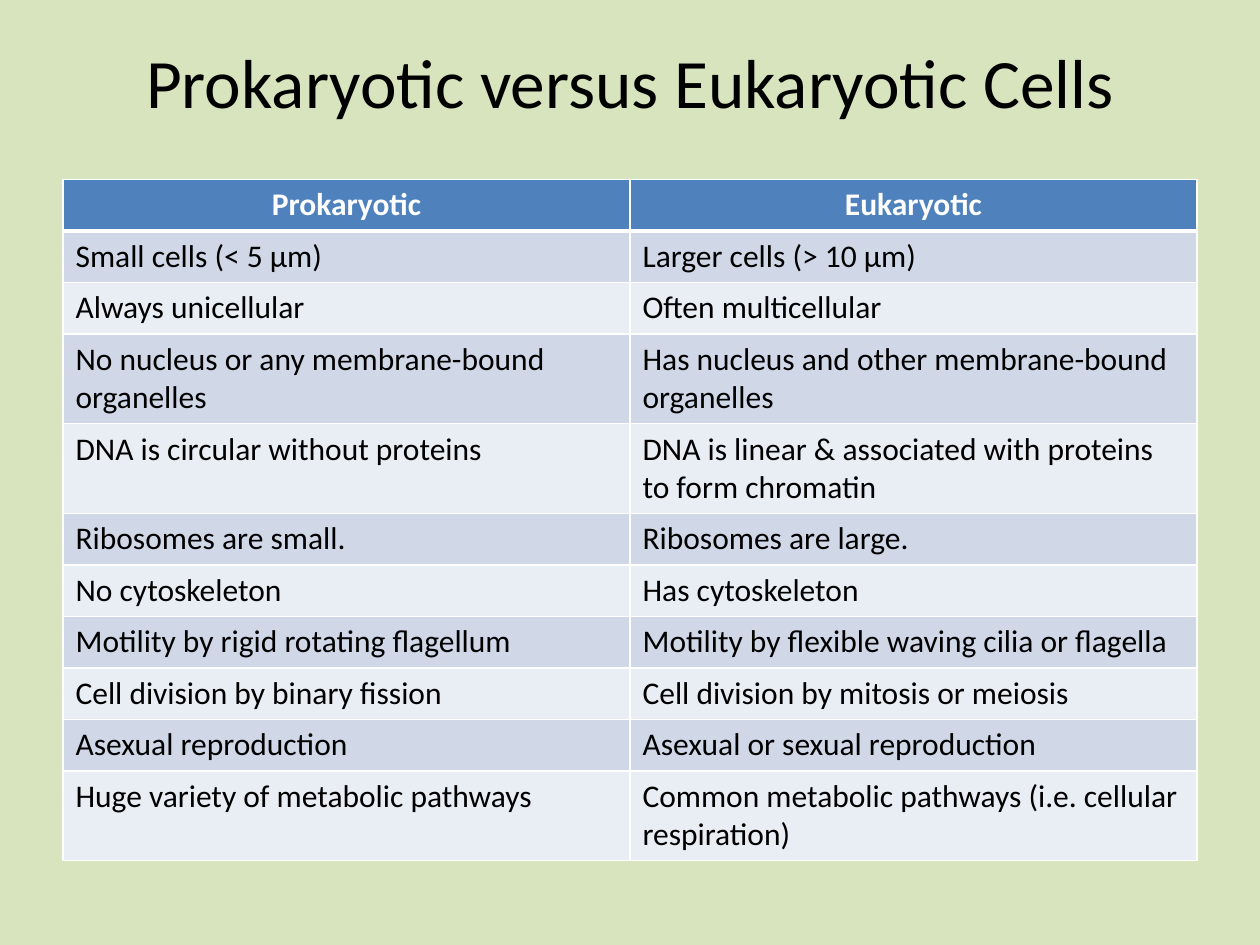
from lxml.etree import SubElement
from pptx import Presentation
from pptx.dml.color import RGBColor
from pptx.enum.text import MSO_ANCHOR as Anchor, PP_ALIGN as Align
from pptx.oxml.ns import qn
from pptx.util import Inches, Pt

TITLE = "Prokaryotic versus Eukaryotic Cells"
HEADINGS = ("Prokaryotic", "Eukaryotic")
COMPARISONS = [
    ("Small cells (< 5 μm)", "Larger cells (> 10 μm)"),
    ("Always unicellular", "Often multicellular"),
    ("No nucleus or any membrane-bound organelles",
     "Has nucleus and other membrane-bound organelles"),
    ("DNA is circular without proteins",
     "DNA is linear & associated with proteins to form chromatin"),
    ("Ribosomes are small.", "Ribosomes are large."),
    ("No cytoskeleton", "Has cytoskeleton"),
    ("Motility by rigid rotating flagellum",
     "Motility by flexible waving cilia or flagella"),
    ("Cell division by binary fission", "Cell division by mitosis or meiosis"),
    ("Asexual reproduction", "Asexual or sexual reproduction"),
    ("Huge variety of metabolic pathways",
     "Common metabolic pathways (i.e. cellular respiration)"),
]


def color(hex_string):
    return RGBColor.from_string(hex_string)


def write(frame, text, size=18, ink="000000", bold=False, align=Align.LEFT):
    paragraph = frame.paragraphs[0]
    paragraph.alignment = align
    run = paragraph.add_run()
    run.text = text
    run.font.name = "Calibri"
    run.font.size = Pt(size)
    run.font.bold = bold
    run.font.color.rgb = color(ink)


def set_borders(cell, ink, **widths):
    """Draw cell borders; widths in points are keyed L, R, T and B."""
    properties = cell._tc.get_or_add_tcPr()
    for position, (side, width) in enumerate(widths.items()):
        line = SubElement(properties, qn(f"a:ln{side}"), w=str(Pt(width)))
        fill = SubElement(line, qn("a:solidFill"))
        SubElement(fill, qn("a:srgbClr"), val=ink)
        properties.insert(position, line)  # borders come before the fill


class ComparisonSlide:
    header = "4F81BD"
    bands = ("D0D8E8", "E9EDF4")
    white = "FFFFFF"

    def __init__(self, presentation, background):
        self.width = presentation.slide_width
        self.height = presentation.slide_height
        self.slide = presentation.slides.add_slide(presentation.slide_layouts[5])
        self.slide.background.fill.solid()
        self.slide.background.fill.fore_color.rgb = color(background)

    def box(self, left, top, width, height):
        """Turn shares of the slide into lengths."""
        return (round(left * self.width), round(top * self.height),
                round(width * self.width), round(height * self.height))

    def title(self, text, *shares):
        shape = self.slide.shapes.title
        shape.left, shape.top, shape.width, shape.height = self.box(*shares)
        shape.text_frame.vertical_anchor = Anchor.MIDDLE
        write(shape.text_frame, text, size=39.6, align=Align.CENTER)

    def table(self, headings, rows, *shares):
        frame = self.slide.shapes.add_table(
            len(rows) + 1, len(headings), *self.box(*shares))
        for row_index, texts in enumerate([headings, *rows]):
            for column_index, text in enumerate(texts):
                cell = frame.table.cell(row_index, column_index)
                self.fill_cell(cell, text, row_index)

    def fill_cell(self, cell, text, row_index):
        is_header = row_index == 0
        cell.fill.solid()
        cell.fill.fore_color.rgb = color(
            self.header if is_header else self.bands[(row_index - 1) % 2])
        set_borders(cell, self.white, L=1, R=1,
                    T=3 if row_index == 1 else 1, B=3 if is_header else 1)
        if is_header:
            write(cell.text_frame, text, ink=self.white, bold=True,
                  align=Align.CENTER)
        else:
            write(cell.text_frame, text)


def main():
    presentation = Presentation()
    presentation.slide_width = Inches(10)
    presentation.slide_height = Inches(7.5)
    page = ComparisonSlide(presentation, "D7E4BD")

    # Title
    page.title(TITLE, 0.05, 0.04, 0.9, 0.09)

    # Comparison table: rows with two lines of text grow on their own
    page.table(HEADINGS, COMPARISONS, 0.05, 0.19, 0.9, 0.6)

    presentation.save("out.pptx")


if __name__ == "__main__":
    main()
